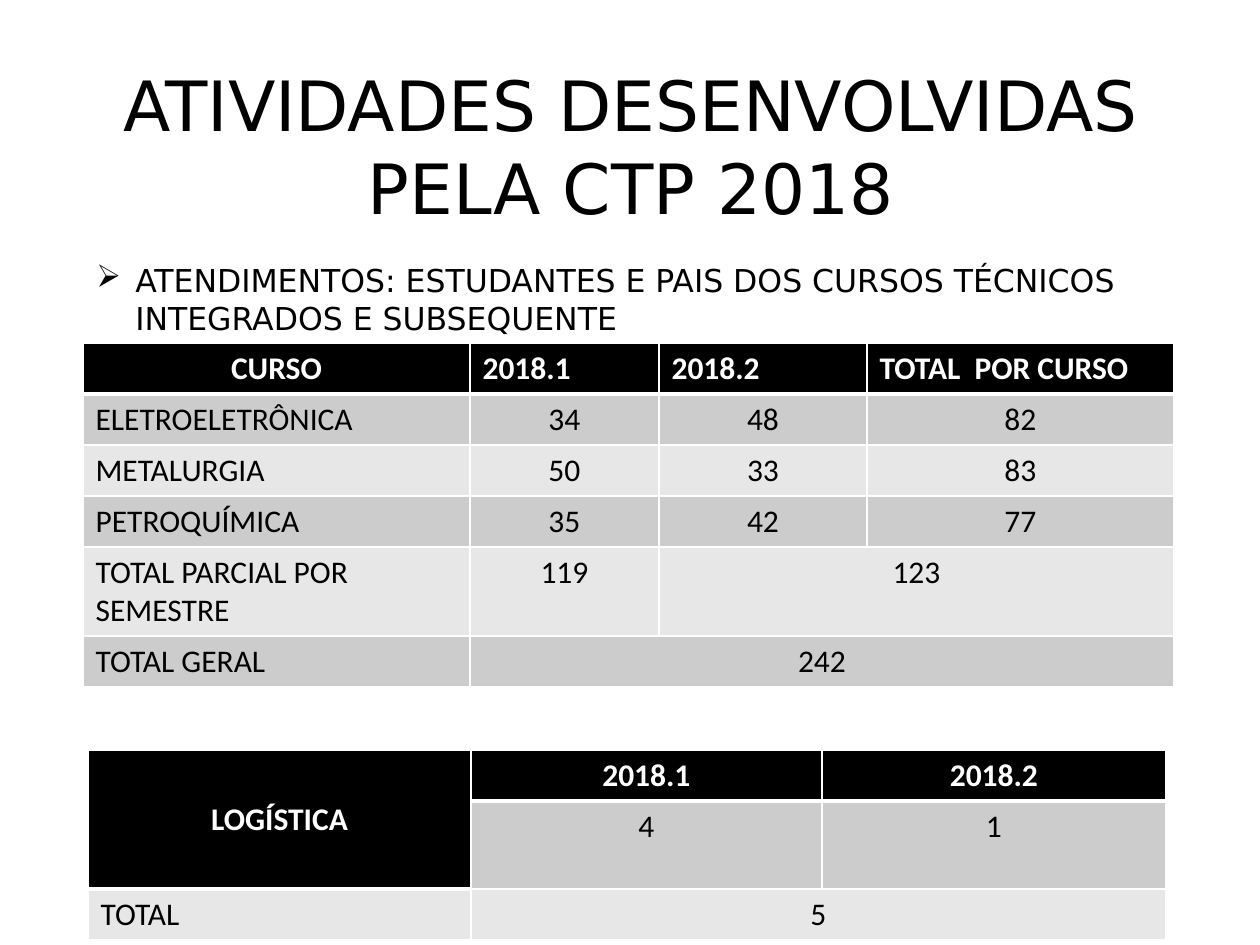
from dataclasses import dataclass

from pptx import Presentation
from pptx import util as u
from pptx.dml.color import RGBColor
from pptx.enum import text
from pptx.oxml import ns
from lxml import etree

PX = 914400 / 126
BLACK, WHITE = "000000", "FFFFFF"
BANDS = ("CCCCCC", "E7E7E7")
LEFT, CENTER = text.PP_ALIGN.LEFT, text.PP_ALIGN.CENTER


@dataclass
class Cell:
    row: int
    column: int
    words: str
    align: text.PP_ALIGN = CENTER
    header: bool = False
    rows: int = 1
    columns: int = 1


@dataclass
class Grid:
    left: int
    top: int
    widths: list[int]
    heights: list[int]
    cells: list[Cell]


def px(length: int) -> u.Emu:
    return u.Emu(round(length * PX))


def color(value: str) -> RGBColor:
    return RGBColor.from_string(value)


def add_run(paragraph, words: str, size: float, name: str, ink: str, bold: bool = False) -> None:
    run = paragraph.add_run()
    run.text = words
    run.font.size = u.Pt(size)
    run.font.name = name
    run.font.bold = bold
    run.font.color.rgb = color(ink)


def add_text(slide, box: tuple[int, int, int, int], words: str, size: float, align: text.PP_ALIGN):
    shape = slide.shapes.add_textbox(*map(px, box))
    shape.text_frame.word_wrap = True
    paragraph = shape.text_frame.paragraphs[0]
    paragraph.alignment = align
    add_run(paragraph, words, size, "DejaVu Sans", BLACK)
    return shape


def add_bullet(paragraph, character: str, indent: int) -> None:
    properties = paragraph._p.get_or_add_pPr()
    properties.set("marL", str(px(indent)))
    properties.set("indent", str(-px(indent)))
    etree.SubElement(properties, ns.qn("a:buChar"), char=character)


def add_borders(cell, bottom: int) -> None:
    properties = cell._tc.get_or_add_tcPr()
    for side, width in (("L", 1), ("R", 1), ("B", bottom)):
        line = etree.SubElement(properties, ns.qn(f"a:ln{side}"), w=str(u.Pt(width)))
        fill = etree.SubElement(line, ns.qn("a:solidFill"))
        etree.SubElement(fill, ns.qn("a:srgbClr"), val=WHITE)


def add_grid(slide, grid: Grid) -> None:
    box = (grid.left, grid.top, sum(grid.widths), sum(grid.heights))
    table = slide.shapes.add_table(len(grid.heights), len(grid.widths), *map(px, box)).table
    table.first_row = table.horz_banding = False
    for column, width in zip(table.columns, grid.widths):
        column.width = px(width)
    for row, height in zip(table.rows, grid.heights):
        row.height = px(height)
    for item in grid.cells:
        last_row, last_column = item.row + item.rows, item.column + item.columns
        for row in range(item.row, last_row):
            for column in range(item.column, last_column):
                part = table.cell(row, column)
                add_borders(part, 3 if item.header else 1)
                part.fill.solid()
                part.fill.fore_color.rgb = color(BLACK if item.header else BANDS[(item.row - 1) % 2])
        cell = table.cell(item.row, item.column)
        if item.rows * item.columns > 1:
            cell.merge(table.cell(last_row - 1, last_column - 1))
        if item.rows > 1:
            cell.vertical_anchor = text.MSO_ANCHOR.MIDDLE
        paragraph = cell.text_frame.paragraphs[0]
        paragraph.alignment = item.align
        add_run(paragraph, item.words, 18, "Calibri", WHITE if item.header else BLACK, item.header)


def course_cells() -> list[Cell]:
    headings = ("CURSO", "2018.1", "2018.2", "TOTAL  POR CURSO")
    records = (
        ("ELETROELETRÔNICA", "34", "48", "82"),
        ("METALURGIA", "50", "33", "83"),
        ("PETROQUÍMICA", "35", "42", "77"),
        ("TOTAL PARCIAL POR SEMESTRE", "119", "123"),
        ("TOTAL GERAL", "242"),
    )
    cells = [Cell(0, i, words, LEFT if i else CENTER, header=True) for i, words in enumerate(headings)]
    for row, record in enumerate(records, 1):
        for column, words in enumerate(record):
            span = len(headings) - column if column == len(record) - 1 else 1
            cells.append(Cell(row, column, words, CENTER if column else LEFT, columns=span))
    return cells


def main() -> None:
    presentation = Presentation()
    presentation.slide_width, presentation.slide_height = px(1260), px(945)
    slide = presentation.slides.add_slide(presentation.slide_layouts[6])

    title = add_text(slide, (64, 66, 1134, 158), "ATIVIDADES DESENVOLVIDAS PELA CTP 2018", 39.6, CENTER)
    title.text_frame.vertical_anchor = text.MSO_ANCHOR.MIDDLE
    topic = add_text(
        slide, (84, 255, 1111, 89),
        "ATENDIMENTOS: ESTUDANTES E PAIS DOS CURSOS TÉCNICOS INTEGRADOS E SUBSEQUENTE", 18, LEFT,
    )
    add_bullet(topic.text_frame.paragraphs[0], "➢", 39)

    add_grid(slide, Grid(83, 343, [387, 189, 208, 307], [51, 51, 51, 51, 89, 51], course_cells()))
    logistics = [
        Cell(0, 0, "LOGÍSTICA", header=True, rows=2),
        Cell(0, 1, "2018.1", header=True),
        Cell(0, 2, "2018.2", header=True),
        Cell(1, 1, "4"),
        Cell(1, 2, "1"),
        Cell(2, 0, "TOTAL", LEFT),
        Cell(2, 1, "5", columns=2),
    ]
    add_grid(slide, Grid(88, 750, [383, 351, 344], [51, 88, 51], logistics))
    presentation.save("out.pptx")


if __name__ == "__main__":
    main()
